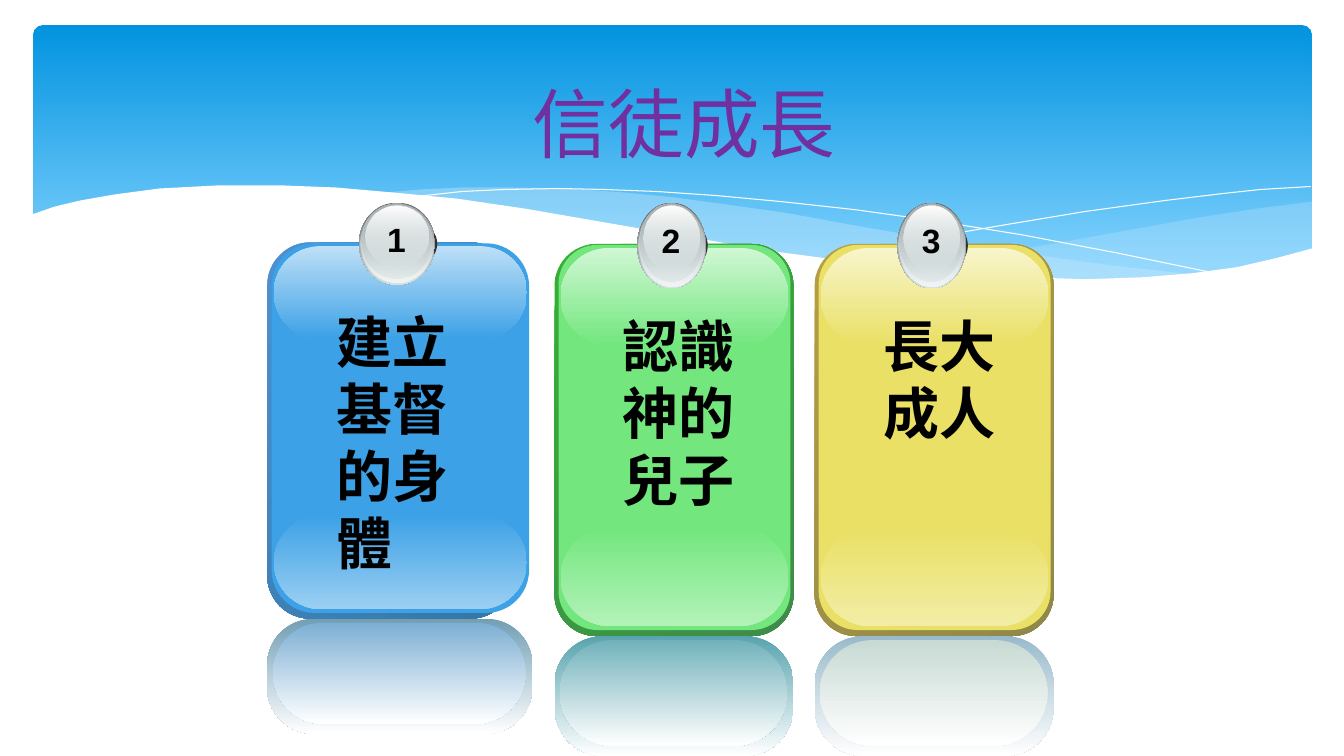
import pptx
import pptx.dml.color
import pptx.enum.shapes
import pptx.enum.text
import pptx.oxml
import pptx.oxml.ns
import pptx.util

Inches = pptx.util.Inches
Pt = pptx.util.Pt
RGBColor = pptx.dml.color.RGBColor
ROUNDED = pptx.enum.shapes.MSO_SHAPE.ROUNDED_RECTANGLE
OVAL = pptx.enum.shapes.MSO_SHAPE.OVAL
CENTER = pptx.enum.text.PP_ALIGN.CENTER

WHITE = RGBColor(0xFF, 0xFF, 0xFF)
BLACK = RGBColor(0x00, 0x00, 0x00)
PURPLE = RGBColor(0x70, 0x30, 0xA0)
SKY_TOP = RGBColor(0x02, 0x93, 0xE0)
SKY_BOTTOM = RGBColor(0x83, 0xD3, 0xFE)
PALE_BLUE = RGBColor(0xC6, 0xE7, 0xFC)
BADGE_SHADOW = RGBColor(0x33, 0x33, 0x33)
BADGE_RIM = RGBColor(0x63, 0x68, 0x69)
BADGE_GREY = RGBColor(0xAA, 0xB2, 0xB3)
SILVER = RGBColor(0xD6, 0xE1, 0xE2)
BADGE_GLOW = RGBColor(0xF1, 0xF5, 0xF5)

# Colours of each card: front, lower glow, upper glow, edge and reflections
BLUE_CARD = dict(
    front=RGBColor(0x3C, 0xA1, 0xE6), low=RGBColor(0x9B, 0xCF, 0xF2),
    high=RGBColor(0xBE, 0xE0, 0xF7),
    edge=(RGBColor(0x4E, 0x91, 0xD4), RGBColor(0x34, 0x77, 0xA4)),
    mirror=(RGBColor(0x72, 0x9E, 0xB4), RGBColor(0x7D, 0xAF, 0xD4)))
GREEN_CARD = dict(
    front=RGBColor(0x73, 0xE7, 0x7E), low=RGBColor(0xB3, 0xF2, 0xB9),
    high=RGBColor(0xD0, 0xF7, 0xD4),
    edge=(RGBColor(0x34, 0xB0, 0x34), RGBColor(0x3F, 0x8B, 0x4A)),
    mirror=(RGBColor(0x58, 0xA4, 0xAE), RGBColor(0x72, 0xB2, 0xBB)))
YELLOW_CARD = dict(
    front=RGBColor(0xE9, 0xE0, 0x65), low=RGBColor(0xF2, 0xED, 0xA6),
    high=RGBColor(0xF8, 0xF5, 0xCC),
    edge=(RGBColor(0xB5, 0x9F, 0x43), RGBColor(0x8F, 0x88, 0x49)),
    mirror=(RGBColor(0x99, 0xBA, 0xCC), RGBColor(0xC8, 0xDA, 0xD4)))

# Wave outlines in inches
RIGHT_WAVE = [
    (13.01, 2), (12.46, 2.07), (11.88, 2.16), (11.1, 2.3), (10.38, 2.43),
    (9.72, 2.53), (8.82, 2.65), (9.4, 2.71), (9.93, 2.75), (10.41, 2.77),
    (10.85, 2.78), (11.38, 2.76), (11.86, 2.72), (12.28, 2.65),
    (12.66, 2.57), (13.01, 2.47)]
MIDDLE_WAVE = [
    (11.9, 2.73), (11.16, 2.65), (10.33, 2.54), (9.41, 2.4), (8.38, 2.22),
    (7.78, 2.11), (7.21, 2.03), (6.69, 1.96), (6.19, 1.91), (5.6, 1.87),
    (5.06, 1.86), (4.59, 1.86), (4.18, 1.88), (3.82, 1.91), (4.56, 1.99),
    (5.11, 2.07), (5.69, 2.16), (6.54, 2.32), (7.55, 2.48), (8.24, 2.58),
    (8.87, 2.66), (9.45, 2.72), (9.98, 2.76), (10.61, 2.79), (11.04, 2.78),
    (11.43, 2.77)]
FALLING_LINE = [
    (4.12, 1.95), (4.58, 1.9), (4.99, 1.88), (5.55, 1.87), (6, 1.88),
    (6.52, 1.9), (7.1, 1.94), (7.75, 2), (8.48, 2.08), (9.27, 2.19),
    (10.14, 2.33), (11.08, 2.51), (12.1, 2.72)]
RISING_LINE = [
    (8.18, 2.57), (8.7, 2.46), (9.27, 2.35), (9.97, 2.23), (10.75, 2.1),
    (11.55, 1.99), (12.13, 1.92), (12.5, 1.88), (13, 1.85)]
WHITE_WAVE = [
    (13.03, 2.46), (12.66, 2.56), (12.27, 2.65), (11.83, 2.71),
    (11.34, 2.75), (10.78, 2.77), (10.15, 2.75), (9.44, 2.7), (8.63, 2.62),
    (7.72, 2.5), (6.71, 2.33), (5.96, 2.2), (5.21, 2.07), (4.53, 1.97),
    (3.9, 1.91), (3.33, 1.86), (2.82, 1.84), (2.14, 1.84), (1.58, 1.87),
    (1.13, 1.93), (0.79, 1.99), (0.54, 2.05), (0.31, 2.13), (0.31, 3.29),
    (13.03, 3.29)]

CARD_TOP = 2.01


def set_opacity(shape, percents):
    colors = shape._element.spPr.iter(pptx.oxml.ns.qn("a:srgbClr"))
    for color, percent in zip(list(colors), percents):
        alpha = pptx.oxml.parse_xml(
            f'<a:alpha {pptx.oxml.ns.nsdecls("a")} val="{percent * 1000}"/>')
        color.append(alpha)


def add_panel(slide, kind, box, colors, rounding=None, angle=90, opacity=(), end=1):
    """Add a borderless shape with one colour or a two-colour gradient."""
    shape = slide.shapes.add_shape(kind, *map(Inches, box))
    shape.shadow.inherit = False
    shape.line.fill.background()
    if rounding is not None:
        shape.adjustments[0] = rounding
    if len(colors) == 1:
        shape.fill.solid()
        shape.fill.fore_color.rgb = colors[0]
    else:
        shape.fill.gradient()
        shape.fill.gradient_angle = 360 - angle
        for stop, color, position in zip(shape.fill.gradient_stops, colors, (0, end)):
            stop.color.rgb = color
            stop.position = position
    set_opacity(shape, opacity)


def add_wave(slide, points, color, opacity=100, closed=True):
    (start_x, start_y), *rest = points
    builder = slide.shapes.build_freeform(Inches(start_x), Inches(start_y))
    builder.add_line_segments([(Inches(x), Inches(y)) for x, y in rest], close=closed)
    shape = builder.convert_to_shape()
    shape.shadow.inherit = False
    if closed:
        shape.fill.solid()
        shape.fill.fore_color.rgb = color
        shape.line.fill.background()
        set_opacity(shape, [opacity])
    else:
        shape.fill.background()
        shape.line.color.rgb = color
        shape.line.width = Pt(0)


def add_text(slide, box, text, size, font, color, bold=False, wrap=True,
             align=None, indent=0):
    text_box = slide.shapes.add_textbox(*map(Inches, box))
    text_box.text_frame.word_wrap = wrap
    paragraph = text_box.text_frame.paragraphs[0]
    paragraph.text = text
    paragraph.alignment = align
    paragraph.font.size = Pt(size)
    paragraph.font.name = font
    paragraph.font.bold = bold
    paragraph.font.color.rgb = color
    if indent:
        paragraph._p.get_or_add_pPr().set("marL", str(Inches(indent)))
    return text_box


def add_card(slide, left, number, label, label_size, colors,
             scale_x=1, scale_y=1, edge_width=2.37):
    def place(x, y, width, height):
        return (left + x * scale_x, CARD_TOP + y * scale_y,
                width * scale_x, height * scale_y)

    # Card body and its glows
    front = colors["front"]
    add_panel(slide, ROUNDED, place(0, 0.41, edge_width, 3.89), colors["edge"], 0.175, 45)
    add_panel(slide, ROUNDED, place(0.04, 0.42, 2.3, 3.82), [front], 0.167)
    add_panel(slide, ROUNDED, place(0.06, 3.23, 2.26, 0.97), (front, colors["low"]), 0.5)
    add_panel(slide, ROUNDED, place(0.06, 0.45, 2.26, 0.96), (colors["high"], front), 0.5)

    # Reflection
    outer, inner = colors["mirror"]
    add_panel(slide, ROUNDED, place(0, 4.3, 2.37, 1.19), (outer, WHITE), 0.404)
    add_panel(slide, ROUNDED, place(0.05, 4.34, 2.26, 1.05), (inner, WHITE), 0.5)

    # Numbered badge
    for box, fill, opacity in (
            ((0.82, 0.14, 0.7, 0.57), (BADGE_SHADOW,), ()),
            ((0.82, 0, 0.68, 0.85), (BADGE_RIM, SILVER), ()),
            ((0.83, 0, 0.66, 0.83), (SILVER, BADGE_GLOW), (0, 100)),
            ((0.84, 0.01, 0.63, 0.77), (BADGE_GREY, SILVER), (100, 48)),
            ((0.88, 0.03, 0.56, 0.63), (WHITE, SILVER), (100, 38))):
        add_panel(slide, OVAL, place(*box), fill, opacity=opacity)
    number_x, number_y, _, _ = place(1.16, 0.12, 0, 0)
    add_text(slide, (number_x - 0.2, number_y, 0.39, 0.5), number, 24, "Arial",
             BLACK, bold=True, wrap=False, align=CENTER)

    # Label
    label_x, label_y, _, _ = place(0.08, 1.03, 0, 0)
    add_text(slide, (label_x, label_y, *label_size), label, 40, "Arial",
             BLACK, bold=True, indent=0.5)


def main():
    presentation = pptx.Presentation()
    presentation.slide_width = Inches(13.33)
    presentation.slide_height = Inches(7.5)
    slide = presentation.slides.add_slide(presentation.slide_layouts[6])

    # Sky banner with waves
    add_panel(slide, ROUNDED, (0.33, 0.25, 12.68, 2.7), (SKY_TOP, SKY_BOTTOM), 0.034, end=0.9)
    add_wave(slide, RIGHT_WAVE, PALE_BLUE, 29)
    add_wave(slide, MIDDLE_WAVE, PALE_BLUE, 40)
    add_wave(slide, FALLING_LINE, WHITE, closed=False)
    add_wave(slide, RISING_LINE, WHITE, closed=False)
    add_wave(slide, WHITE_WAVE, WHITE)

    # Title
    title = add_text(slide, (3.97, 0.4, 5.63, 1.62), "信徒成長", 54, "Calibri",
                     PURPLE, align=CENTER)
    title.text_frame.vertical_anchor = pptx.enum.text.MSO_ANCHOR.MIDDLE

    # Growth cards
    add_card(slide, 2.65, "1", "建立基督的身體", (2.35, 2.79), BLUE_CARD,
             scale_x=1.11, scale_y=0.96, edge_width=2.2)
    add_card(slide, 5.5, "2", "認識神的兒子", (2.25, 2.12), GREEN_CARD)
    add_card(slide, 8.08, "3", "長大成人", (2.25, 1.45), YELLOW_CARD)

    presentation.save("out.pptx")


if __name__ == "__main__":
    main()
